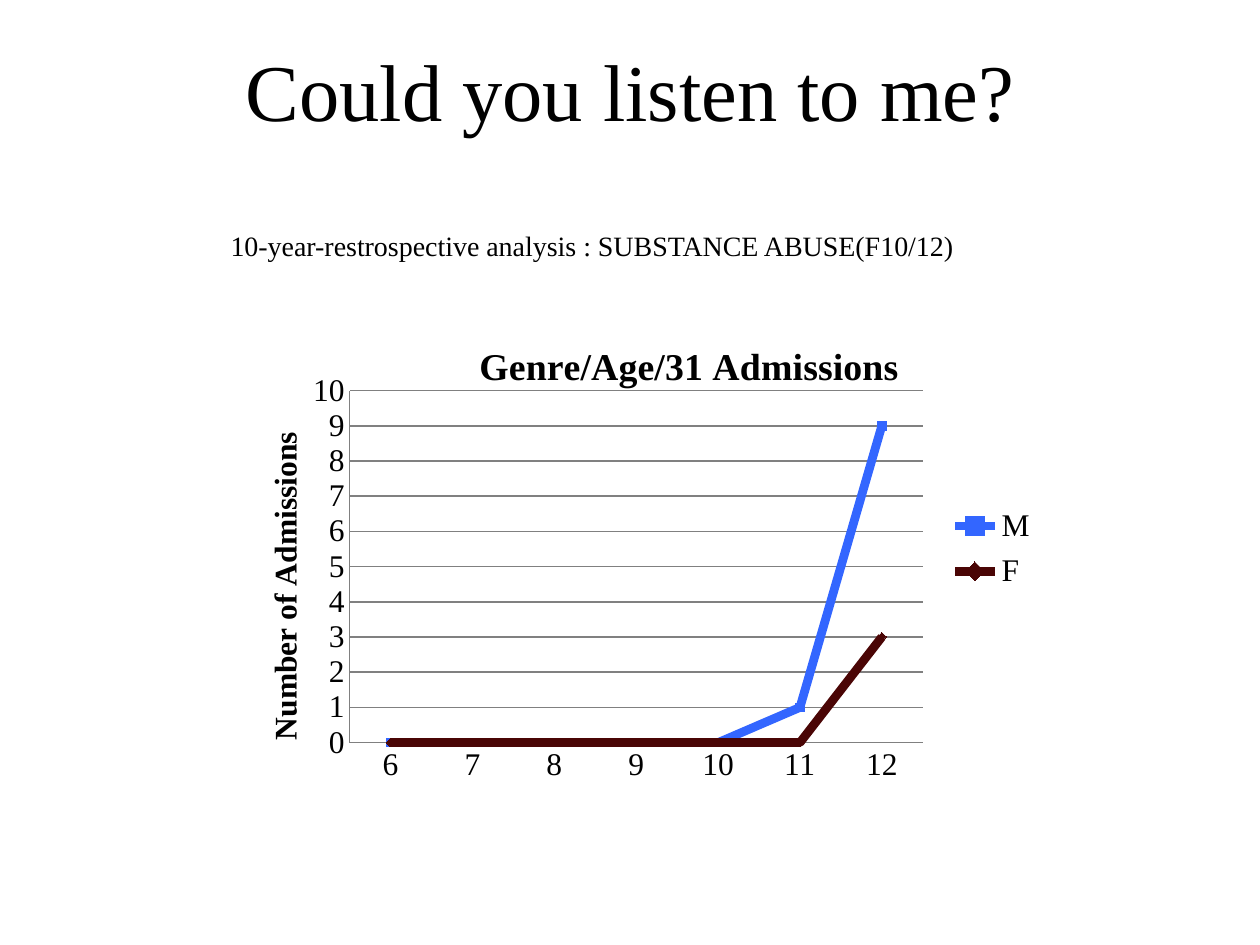
from lxml.etree import SubElement
from pptx import Presentation
from pptx.chart.data import CategoryChartData
from pptx.dml.color import RGBColor
from pptx.enum.chart import XL_CHART_TYPE as ChartType
from pptx.enum.chart import XL_LEGEND_POSITION as LegendPosition
from pptx.enum.chart import XL_MARKER_STYLE as Marker
from pptx.enum.chart import XL_TICK_MARK as TickMark
from pptx.enum.text import MSO_ANCHOR as Anchor
from pptx.enum.text import PP_ALIGN as Align
from pptx.oxml.ns import qn
from pptx.util import Inches, Pt

WIDTH, HEIGHT = 10, 7.5
FONT = "Times New Roman"
BLACK, GREY = "000000", "808080"
AGES = ["6", "7", "8", "9", "10", "11", "12"]
ADMISSIONS = [
    ("M", [0, 0, 0, 0, 0, 1, 9], "3366FF", Marker.SQUARE),
    ("F", [0, 0, 0, 0, 0, 0, 3], "4A0505", Marker.DIAMOND),
]


def color(hex_value):
    return RGBColor.from_string(hex_value)


def place(shape, box):
    """Place a shape by shares of the slide: left, top, width, height."""
    left, top, width, height = box
    shape.left, shape.width = Inches(left * WIDTH), Inches(width * WIDTH)
    shape.top, shape.height = Inches(top * HEIGHT), Inches(height * HEIGHT)


def style_font(font, size, bold=False):
    font.name, font.size, font.bold = FONT, Pt(size), bold
    font.color.rgb = color(BLACK)


def write_line(shape, box, words, size):
    place(shape, box)
    frame = shape.text_frame
    frame.word_wrap = True
    frame.vertical_anchor = Anchor.MIDDLE
    para = frame.paragraphs[0]
    para.alignment = Align.CENTER
    span = para.add_run()
    span.text = words
    style_font(span.font, size)


def set_layout(element, index, x, y, width=None, height=None, inner=False):
    """Fix a chart part by shares of the chart's frame."""
    for old in element.findall(qn("c:layout")):
        element.remove(old)
    layout = SubElement(element, qn("c:layout"))
    element.insert(index, layout)
    manual = SubElement(layout, qn("c:manualLayout"))
    settings = [("layoutTarget", "inner")] if inner else []
    settings += [("xMode", "edge"), ("yMode", "edge"), ("x", x), ("y", y)]
    if width:
        settings += [("w", width), ("h", height)]
    for name, value in settings:
        SubElement(manual, qn(f"c:{name}")).set("val", str(value))


def add_chart_title(title, words, size, x, y):
    frame = title.text_frame
    span = frame.paragraphs[0].add_run()
    span.text = words
    style_font(span.font, size, bold=True)
    set_layout(title.element, 1, x, y)


def style_axis(axis):
    axis.major_tick_mark = axis.minor_tick_mark = TickMark.NONE
    axis.format.line.color.rgb = color(GREY)
    axis.format.line.width = Pt(1)
    style_font(axis.tick_labels.font, 18)


def add_admissions_chart(page, box):
    data = CategoryChartData()
    data.categories = AGES
    for name, values, _, _ in ADMISSIONS:
        data.add_series(name, values)
    frame = page.shapes.add_chart(ChartType.LINE_MARKERS, 0, 0, 1, 1, data)
    place(frame, box)
    chart = frame.chart
    style_font(chart.font, 18)

    # Titles
    chart.has_title = True
    add_chart_title(chart.chart_title, "Genre/Age/31 Admissions", 21.6, 0.3, 0.1)
    ages, counts = chart.category_axis, chart.value_axis
    counts.has_title = True
    add_chart_title(counts.axis_title, "Number of Admissions", 18, 0.04, 0.28)
    for body in counts.axis_title.element.iter(qn("a:bodyPr")):
        body.set("rot", "-5400000")
        body.set("vert", "horz")

    # Axes and grid
    for axis in (ages, counts):
        style_axis(axis)
    counts.minimum_scale, counts.maximum_scale, counts.major_unit = 0, 10, 1
    counts.has_major_gridlines = True
    grid = counts.major_gridlines.format.line
    grid.color.rgb, grid.width = color(GREY), Pt(1)

    # Lines
    plot = chart.plots[0]
    plot.vary_by_categories = False
    for series, (_, _, shade, marker) in zip(plot.series, ADMISSIONS):
        series.smooth = False
        series.format.line.color.rgb = color(shade)
        series.format.line.width = Pt(5)
        series.marker.style, series.marker.size = marker, 5
        series.marker.format.fill.solid()
        series.marker.format.fill.fore_color.rgb = color(shade)
        series.marker.format.line.color.rgb = color(shade)

    # Legend and plot area
    chart.has_legend = True
    chart.legend.position = LegendPosition.RIGHT
    chart.legend.include_in_layout = False
    style_font(chart.legend.font, 18)
    set_layout(chart.legend._element, 1, 0.87, 0.42, 0.13, 0.2)
    plot_area = next(chart.element.iter(qn("c:plotArea")))
    set_layout(plot_area, 0, 0.15, 0.21, 0.7, 0.69, inner=True)


def main():
    deck = Presentation()
    deck.slide_width, deck.slide_height = Inches(WIDTH), Inches(HEIGHT)
    page = deck.slides.add_slide(deck.slide_layouts[5])

    # Heading and subject
    write_line(page.shapes.title, (0.1, 0.03, 0.8, 0.13),
               "Could you listen to me?", 46)
    subject = page.shapes.add_textbox(0, 0, 1, 1)
    write_line(subject, (0.07, 0.23, 0.8, 0.06),
               "10-year-restrospective analysis : SUBSTANCE ABUSE(F10/12)", 16)

    add_admissions_chart(page, (0.18, 0.3, 0.65, 0.54))
    deck.save("out.pptx")


if __name__ == "__main__":
    main()
